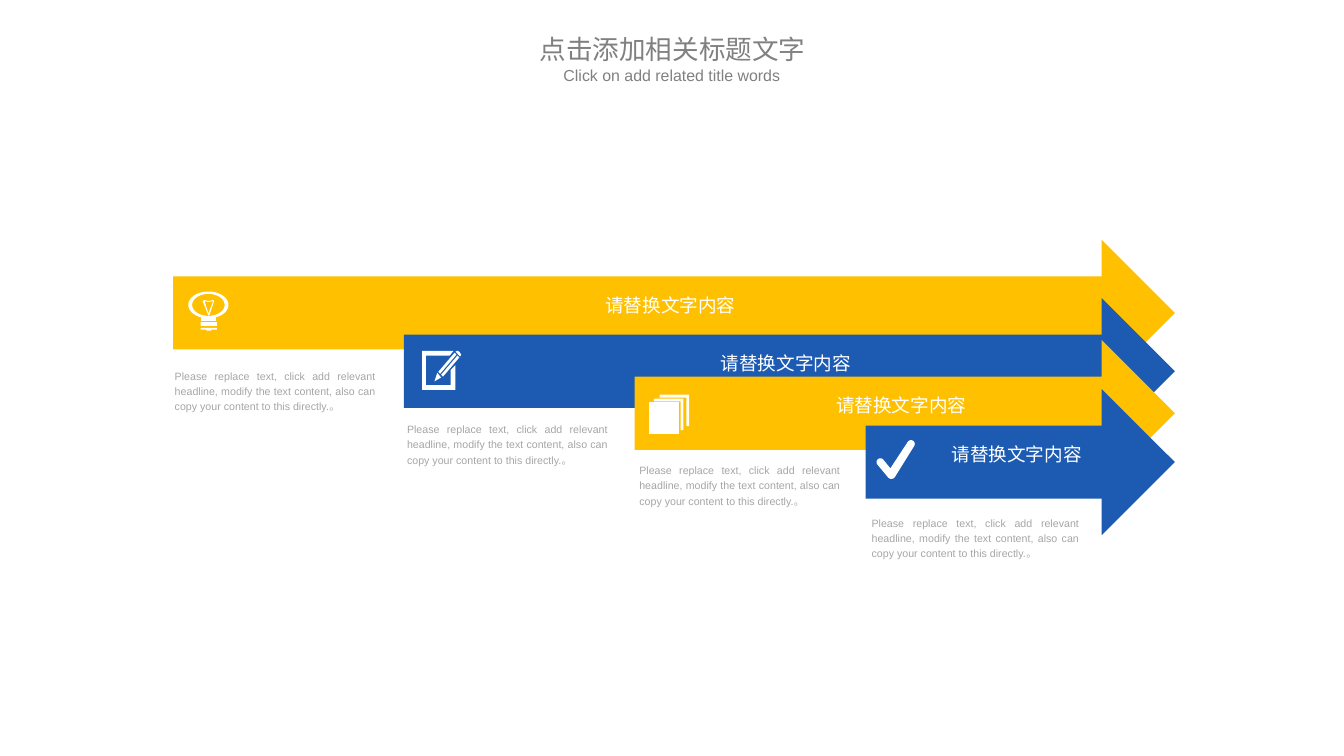
import math

from pptx import Presentation
from pptx.dml.color import RGBColor
from pptx.enum import shapes, text
from pptx.util import Inches, Pt

AMBER = RGBColor(0xFF, 0xC0, 0x00)
BLUE = RGBColor(0x1D, 0x5B, 0xB3)
WHITE = RGBColor(0xFF, 0xFF, 0xFF)
TITLE_GREY = RGBColor(0x80, 0x80, 0x80)
CAPTION_GREY = RGBColor(0xA6, 0xA6, 0xA6)

ARROW_TIP = 12.29
ARROW_HEIGHT = 1.53
FIRST_ARROW, ARROW_STEP = 1.81, 2.415
FIRST_CAPTION, CAPTION_STEP = 1.73, 2.43
LABEL = "请替换文字内容"
CAPTION = ("Please replace text, click add relevant headline, modify the text "
           "content, also can copy your content to this directly.。")


def paint(shape, color):
    shape.shadow.inherit = False
    shape.fill.solid()
    shape.fill.fore_color.rgb = color
    shape.line.fill.background()


def write(frame, words, size, color, align, font="Arial"):
    frame.word_wrap = True
    frame.text = words
    paragraph = frame.paragraphs[0]
    paragraph.alignment = align
    run_font = paragraph.runs[0].font
    run_font.name, run_font.size = font, Pt(size)
    run_font.color.rgb = color
    return paragraph


def outline(icon, x, y, *contours):
    """Draw closed white contours whose points are offsets from (x, y)."""
    placed = [[(Inches(x + dx), Inches(y + dy)) for dx, dy in contour]
              for contour in contours]
    builder = icon.shapes.build_freeform(*placed[0][0])
    builder.add_line_segments(placed[0][1:])
    for contour in placed[1:]:
        builder.move_to(*contour[0])
        builder.add_line_segments(contour[1:])
    paint(builder.convert_to_shape(), WHITE)


def arc(cx, cy, rx, ry, start, end, steps=16):
    """Points on an ellipse between two angles in degrees, clockwise from the right."""
    angles = [math.radians(start + (end - start) * i / steps) for i in range(steps + 1)]
    return [(cx + rx * math.cos(a), cy + ry * math.sin(a)) for a in angles]


def draw_bulb(icon, x, y):
    outline(icon, x, y, arc(0.21, 0.14, 0.21, 0.14, 0, 360, 48),
            arc(0.21, 0.14, 0.17, 0.115, 360, 0, 48))
    outline(icon, x, y, [(0.13, 0.26), (0.29, 0.26), (0.29, 0.31), (0.13, 0.31)])
    ring = icon.shapes.add_shape(shapes.MSO_SHAPE.RECTANGLE, Inches(x + 0.13),
                                 Inches(y + 0.32), Inches(0.17), Inches(0.04))
    paint(ring, WHITE)
    outline(icon, x, y, [(0.13, 0.38), (0.3, 0.38), (0.3, 0.4), (0.24, 0.4),
                         (0.24, 0.41), (0.19, 0.41), (0.19, 0.4), (0.13, 0.4)])
    outline(icon, x, y,
            [(0.27, 0.1), (0.26, 0.09), (0.21, 0.1), (0.17, 0.09), (0.15, 0.1),
             (0.21, 0.25), (0.22, 0.25)],
            [(0.21, 0.23), (0.17, 0.1), (0.21, 0.11), (0.26, 0.1)])


def draw_pencil(icon, x, y):
    nib = [(0.2, 0.28), (0.16, 0.23), (0.13, 0.32)]
    upper_shaft = [(0.34, 0.02), (0.17, 0.22), (0.19, 0.24), (0.36, 0.04)]
    lower_shaft = [(dx + 0.03, dy + 0.03) for dx, dy in upper_shaft]
    eraser = [(0.35, 0.01), (0.37, 0), (0.39, 0.01), (0.41, 0.04), (0.4, 0.06)]
    frame = [(0.3, 0.36), (0.04, 0.36), (0.04, 0.05), (0.29, 0.05), (0.33, 0),
             (0, 0), (0, 0.41), (0.35, 0.41), (0.35, 0.15), (0.3, 0.2)]
    for part in (nib, upper_shaft, lower_shaft, eraser, frame):
        outline(icon, x, y, part)


def draw_pages(icon, x, y):
    edge = [(0, 0), (0.31, 0), (0.31, 0.33), (0.28, 0.33), (0.28, 0.03), (0, 0.03)]
    for dx, dy in ((0.05, 0.04), (0.11, 0)):
        outline(icon, x + dx, y + dy, edge)
    outline(icon, x, y, [(0, 0.08), (0.31, 0.08), (0.31, 0.41), (0, 0.41)])


def draw_check(icon, x, y):
    outline(icon, x, y, arc(0.045, 0.235, 0.04, 0.04, 138, 318)
            + [(0.15, 0.3)]
            + arc(0.365, 0.045, 0.04, 0.04, 213, 393)
            + arc(0.16, 0.365, 0.045, 0.045, 33, 138))


def add_heading(slide, left, top, width, words, size, font):
    box = slide.shapes.add_textbox(Inches(left), Inches(top), Inches(width), Inches(0.41))
    heading = write(box.text_frame, words, size, TITLE_GREY, text.PP_ALIGN.CENTER, font)
    heading.space_after = Pt(6)


def add_caption(slide, left, top, width):
    box = slide.shapes.add_textbox(Inches(left), Inches(top), Inches(width), Inches(0.58))
    caption = write(box.text_frame, CAPTION, 8, CAPTION_GREY, text.PP_ALIGN.JUSTIFY)
    caption.line_spacing = 1.2


def add_arrow(slide, left, top, color):
    arrow = slide.shapes.add_shape(
        shapes.MSO_SHAPE.RIGHT_ARROW, Inches(left), Inches(top),
        Inches(ARROW_TIP - left), Inches(ARROW_HEIGHT))
    paint(arrow, color)
    frame = arrow.text_frame
    frame.margin_left, frame.margin_right = Inches(0.59), Inches(0.28)
    frame.margin_top, frame.margin_bottom = Inches(0.03), Inches(0.24)
    frame.vertical_anchor = text.MSO_ANCHOR.MIDDLE
    label = write(frame, LABEL, 14, WHITE, text.PP_ALIGN.CENTER)
    label.line_spacing = 1.2


# arrow top, colour, caption top, caption width, icon, icon offset from the arrow
STEPS = [
    (2.51, AMBER, 3.79, 2.3, draw_bulb, (0.16, 0.54)),
    (3.12, BLUE, 4.35, 2.3, draw_pencil, (0.19, 0.55)),
    (3.56, AMBER, 4.78, 2.3, draw_pages, (0.15, 0.57)),
    (4.07, BLUE, 5.33, 2.37, draw_check, (0.11, 0.53)),
]


def add_staircase(slide):
    for i, (top, color, caption_top, caption_width, draw_icon, (dx, dy)) in enumerate(STEPS):
        left = FIRST_ARROW + i * ARROW_STEP
        add_caption(slide, FIRST_CAPTION + i * CAPTION_STEP, caption_top, caption_width)
        add_arrow(slide, left, top, color)
        draw_icon(slide.shapes.add_group_shape(), left + dx, top + dy)


def main():
    deck = Presentation()
    deck.slide_width, deck.slide_height = Inches(14.06), Inches(7.91)
    slide = deck.slides.add_slide(deck.slide_layouts[6])
    add_staircase(slide)
    add_heading(slide, 5.36, 0.29, 3.35, "点击添加相关标题文字", 20, "Noto Sans CJK SC")
    add_heading(slide, 5.76, 0.64, 2.54, "Click on add related title words", 12, "Arial")
    deck.save("out.pptx")


if __name__ == "__main__":
    main()
